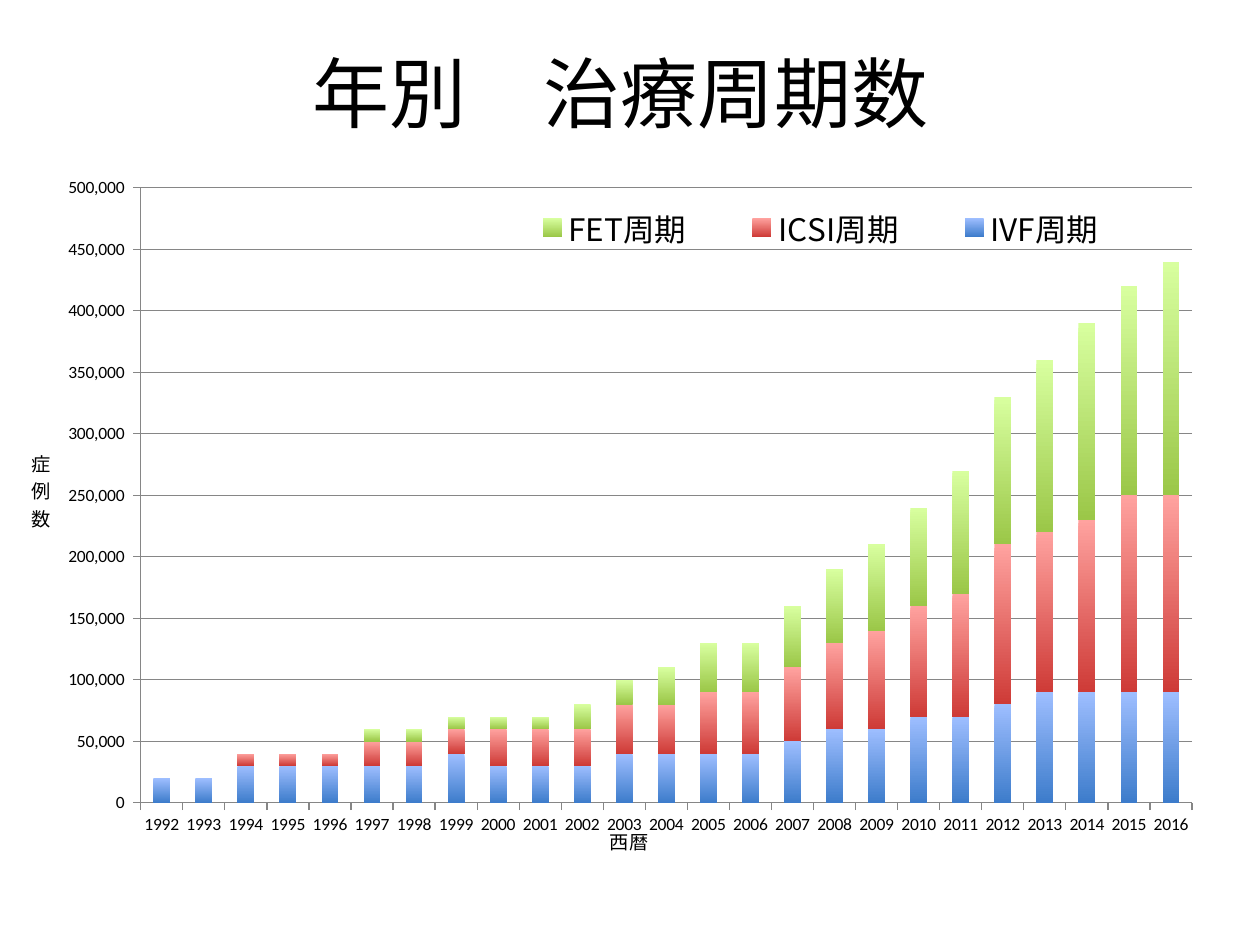
from lxml import etree
from pptx import Presentation
from pptx.chart.data import CategoryChartData
from pptx.dml.color import RGBColor
from pptx.enum.chart import XL_CHART_TYPE, XL_LEGEND_POSITION, XL_TICK_MARK
from pptx.enum.text import MSO_ANCHOR, PP_ALIGN
from pptx.oxml.ns import qn
from pptx.util import Inches, Pt

STACKED = XL_CHART_TYPE.COLUMN_STACKED
LEGEND_RIGHT = XL_LEGEND_POSITION.RIGHT
TICK_OUT = XL_TICK_MARK.OUTSIDE
TICK_NONE = XL_TICK_MARK.NONE
MIDDLE = MSO_ANCHOR.MIDDLE
CENTER = PP_ALIGN.CENTER

COLORS = {
    "text": "000000",
    "axis": "868686",
    "IVF": ("9EBEFF", "3D7CCB"),
    "ICSI": ("FFA29F", "CE3B37"),
    "FET": ("D8FF9F", "9BC748"),
}
LATIN, JAPANESE = "Calibri", "Noto Sans CJK JP"
NUMBER_FORMAT = r"#,##0_);[Red]\(#,##0\)"

YEARS = range(1992, 2017)
CYCLES_IN_TEN_THOUSANDS = {
    "IVF": [2, 2, 3, 3, 3, 3, 3, 4, 3, 3, 3, 4, 4,
            4, 4, 5, 6, 6, 7, 7, 8, 9, 9, 9, 9],
    "ICSI": [0, 0, 1, 1, 1, 2, 2, 2, 3, 3, 3, 4, 4,
             5, 5, 6, 7, 8, 9, 10, 13, 13, 14, 16, 16],
    "FET": [0, 0, 0, 0, 0, 1, 1, 1, 1, 1, 2, 2, 3,
            4, 4, 5, 6, 7, 8, 10, 12, 14, 16, 17, 19],
}


def place_in_chart(element, index, inner=False, **percents):
    """Give a chart part a manual layout, in percent of the chart's size."""
    old_layout = element.find(qn("c:layout"))
    if old_layout is not None:
        element.remove(old_layout)
    layout = etree.Element(qn("c:layout"))
    manual = etree.SubElement(layout, qn("c:manualLayout"))
    if inner:
        etree.SubElement(manual, qn("c:layoutTarget")).set("val", "inner")
    for side in ("x", "y"):
        etree.SubElement(manual, qn(f"c:{side}Mode")).set("val", "edge")
    for side, percent in percents.items():
        etree.SubElement(manual, qn(f"c:{side}")).set("val", f"{percent / 100:.3f}")
    element.insert(index, layout)


class SlideBuilder:
    """Holds the slide and its text style."""

    def __init__(self, presentation):
        self.slide = presentation.slides.add_slide(presentation.slide_layouts[5])

    def style_font(self, font, size, name=LATIN):
        font.size, font.name, font.bold = Pt(size), name, False
        font.color.rgb = RGBColor.from_string(COLORS["text"])
        latin = font._element.find(qn("a:latin"))
        latin.addnext(etree.Element(qn("a:ea"), typeface=JAPANESE))

    def title(self, text, left, top, width, height):
        title = self.slide.shapes.title
        title.left, title.top = Inches(left), Inches(top)
        title.width, title.height = Inches(width), Inches(height)
        frame = title.text_frame
        frame.text, frame.vertical_anchor = text, MIDDLE
        frame.paragraphs[0].alignment = CENTER
        self.style_font(frame.paragraphs[0].font, 44, JAPANESE)

    def axis(self, axis, title, x, y):
        axis.major_tick_mark, axis.minor_tick_mark = TICK_OUT, TICK_NONE
        axis.format.line.color.rgb = RGBColor.from_string(COLORS["axis"])
        self.style_font(axis.tick_labels.font, 10)
        frame = axis.axis_title.text_frame
        frame.text = title
        self.style_font(frame.paragraphs[0].font, 11)
        place_in_chart(axis.axis_title._element, 1, x=x, y=y)

    def stacked_columns(self, left, top, width, height):
        data = CategoryChartData(number_format=NUMBER_FORMAT)
        data.categories = [str(year) for year in YEARS]
        for method, counts in CYCLES_IN_TEN_THOUSANDS.items():
            data.add_series(f"{method}周期", [count * 10000 for count in counts])
        chart = self.slide.shapes.add_chart(
            STACKED, Inches(left), Inches(top), Inches(width), Inches(height), data
        ).chart
        chart.has_title = False
        self.style_font(chart.font, 10)

        plot = chart.plots[0]
        plot.gap_width, plot.overlap = 150, 100
        plot.vary_by_categories = False
        for method, series in zip(CYCLES_IN_TEN_THOUSANDS, plot.series):
            series.invert_if_negative = False
            fill = series.format.fill
            fill.gradient()
            fill.gradient_angle = 270
            for stop, color, position in zip(fill.gradient_stops, COLORS[method], (0, 1)):
                stop.color.rgb = RGBColor.from_string(color)
                stop.position = position
        plot_area = chart._chartSpace.chart.plotArea
        place_in_chart(plot_area, 0, inner=True, x=9.6, y=3.5, w=88.3, h=89.7)

        self.axis(chart.category_axis, "西暦", x=48.7, y=96)
        values = chart.value_axis
        self.axis(values, "症例数", x=0.1, y=40.9)
        body = values.axis_title._element.find(".//" + qn("a:bodyPr"))
        body.set("rot", "0")
        body.set("vert", "wordArtVertRtl")
        values.minimum_scale, values.maximum_scale = 0, 500000
        values.major_unit = 50000
        values.tick_labels.number_format = NUMBER_FORMAT
        values.tick_labels.number_format_is_linked = False
        grid = values.major_gridlines.format.line
        grid.color.rgb = RGBColor.from_string(COLORS["axis"])

        chart.has_legend = True
        legend = chart.legend
        legend.position, legend.include_in_layout = LEGEND_RIGHT, False
        self.style_font(legend.font, 18, JAPANESE)
        place_in_chart(legend._element, 1, x=38.7, y=5.8, w=56, h=7)


def main():
    presentation = Presentation()
    presentation.slide_width, presentation.slide_height = Inches(10), Inches(7.5)
    builder = SlideBuilder(presentation)
    builder.title("年別　治療周期数", 0.43, 0.27, 9, 0.91)
    builder.stacked_columns(0.21, 1.3, 9.45, 5.53)
    presentation.save("out.pptx")


if __name__ == "__main__":
    main()
